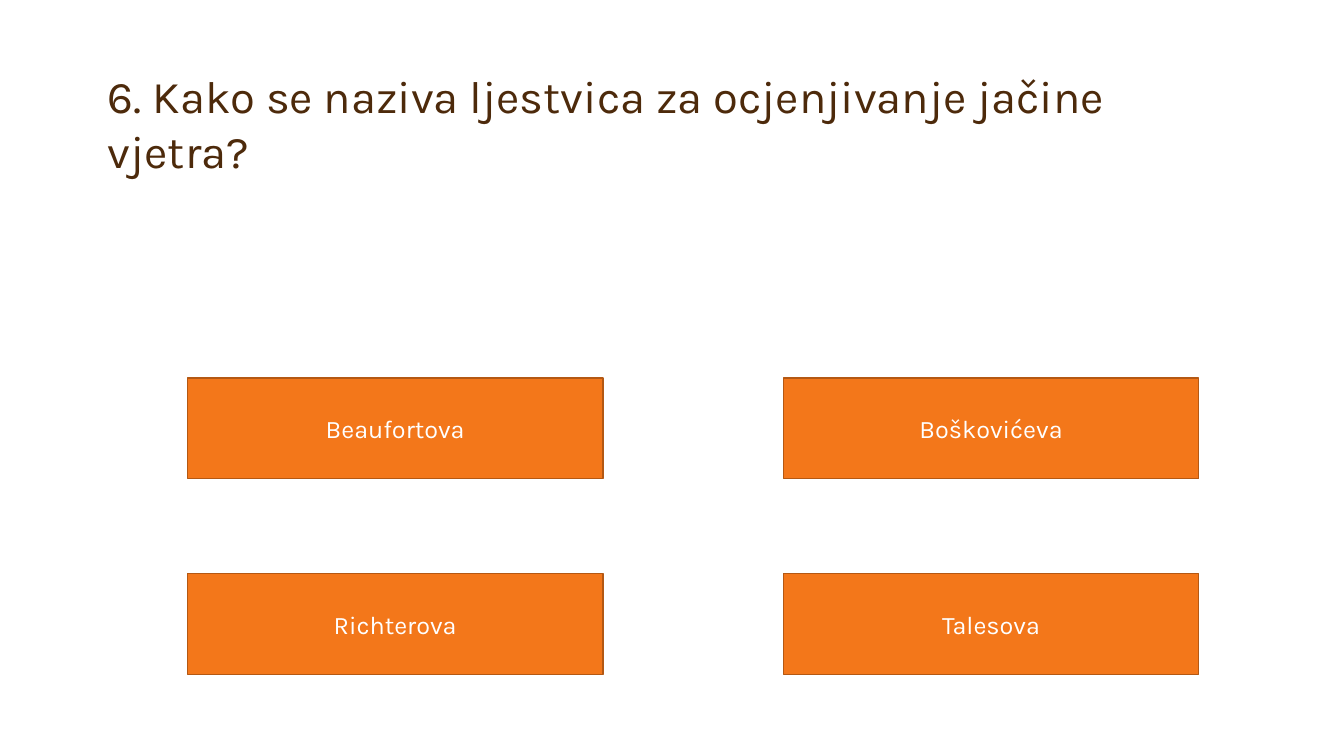
from pptx import Presentation, util as u
from pptx.dml.color import RGBColor
from pptx.enum import shapes, text

TITLE = "6. Kako se naziva ljestvica za ocjenjivanje jačine vjetra?"
ANSWERS = [
    ["Beaufortova", "Boškovićeva"],
    ["Richterova", "Talesova"],
]
COLORS = {"title": "4D2A0B", "fill": "F3771A", "line": "B45813", "answer": "FFFFFF"}
FONTS = {
    "title": {"name": "Karla", "size": u.Pt(32.4)},
    "answer": {"name": "Karla", "size": u.Pt(18)},
}
LEFT, TOP = 1.86, 3.75
STEP_X, STEP_Y = 5.91, 1.94
WIDTH, HEIGHT = 4.12, 1


def color(key):
    return RGBColor.from_string(COLORS[key])


def write(shape, words, style, anchor, align):
    frame = shape.text_frame
    frame.word_wrap = True
    frame.vertical_anchor = anchor
    par = frame.paragraphs[0]
    par.alignment = align
    run = par.add_run()
    run.text = words
    for key, value in FONTS[style].items():
        setattr(run.font, key, value)
    run.font.color.rgb = color(style)


def add_title(slide):
    box = slide.shapes.add_textbox(*map(u.Inches, (0.97, 0.52, 11.18, 1.29)))
    write(box, TITLE, "title", text.MSO_ANCHOR.BOTTOM, text.PP_ALIGN.LEFT)


def add_answer(slide, words, col, row):
    place = (LEFT + col * STEP_X, TOP + row * STEP_Y, WIDTH, HEIGHT)
    box = slide.shapes.add_shape(shapes.MSO_SHAPE.RECTANGLE, *map(u.Inches, place))
    box.shadow.inherit = False
    box.fill.solid()
    box.fill.fore_color.rgb = color("fill")
    box.line.color.rgb = color("line")
    box.line.width = u.Pt(1)
    write(box, words, "answer", text.MSO_ANCHOR.MIDDLE, text.PP_ALIGN.CENTER)


def main():
    deck = Presentation()
    deck.slide_width, deck.slide_height = u.Inches(13.33), u.Inches(7.5)
    slide = deck.slides.add_slide(deck.slide_layouts[6])
    add_title(slide)
    for row, line in enumerate(ANSWERS):
        for col, words in enumerate(line):
            add_answer(slide, words, col, row)
    deck.save("out.pptx")


if __name__ == "__main__":
    main()
